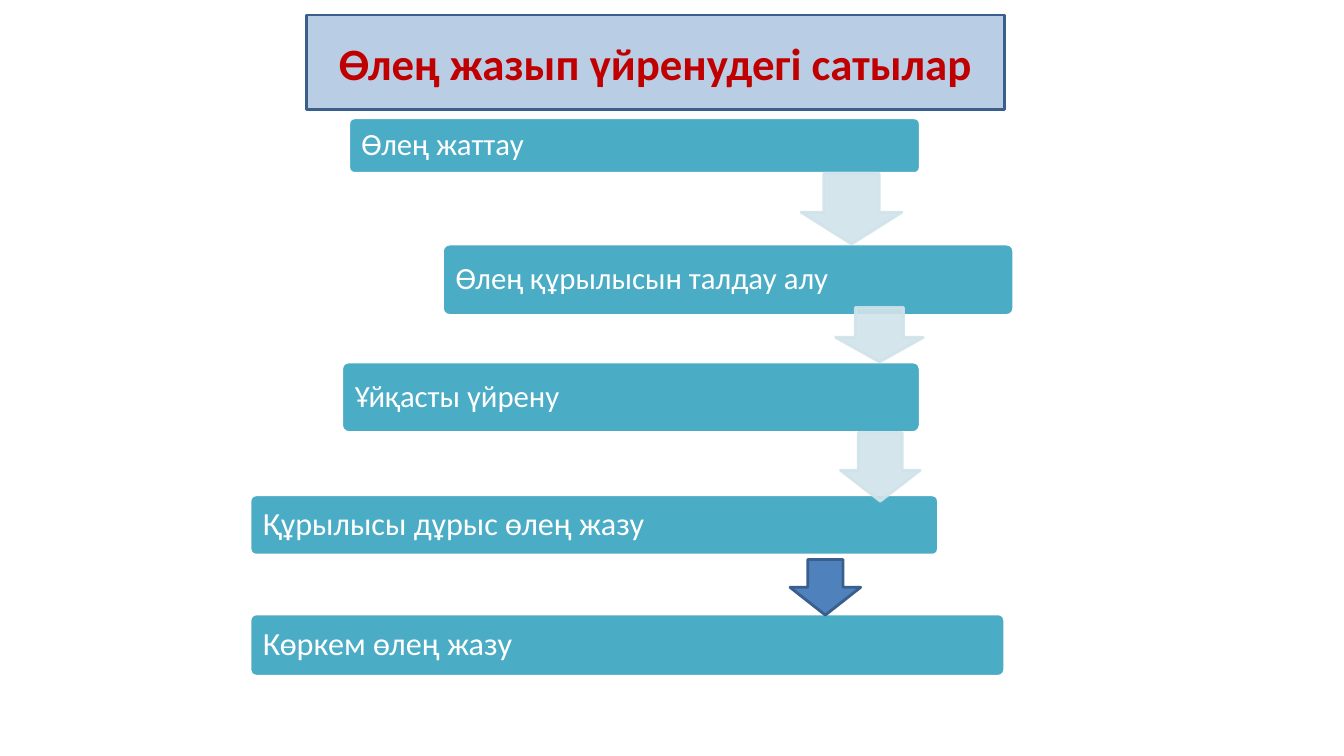
from lxml.etree import SubElement
from pptx import Presentation
from pptx.dml.color import RGBColor
from pptx.enum.shapes import MSO_SHAPE as Shape
from pptx.enum.text import MSO_ANCHOR as Anchor, PP_ALIGN as Align
from pptx.oxml.ns import qn
from pptx.util import Cm, Pt

TITLE_ONLY = 5
TITLE = "Өлең жазып үйренудегі сатылар"
TITLE_BOX = (7.72, 0.38, 17.6, 2.39)

# Step text, font size in points, box in cm
STEPS = [
    ("Өлең жаттау", 22, (8.79, 2.97, 14.4, 1.4)),
    ("Өлең құрылысын талдау алу", 22, (11.15, 6.15, 14.4, 1.8)),
    ("Ұйқасты үйрену", 22, (8.61, 9.12, 14.58, 1.78)),
    ("Құрылысы дұрыс өлең жазу", 23, (6.3, 12.47, 17.35, 1.52)),
    ("Көркем өлең жазу", 23, (6.3, 15.47, 19.02, 1.57)),
]
PALE_ARROWS = [
    (20.19, 4.37, 2.54, 1.78),
    (21.06, 7.75, 2.21, 1.37),
    (21.18, 10.9, 2.01, 1.73),
]
BLUE_ARROW = (19.91, 14.1, 1.78, 1.4)


def color(hex_string):
    return RGBColor.from_string(hex_string)


def paint(shape, fill, line):
    shape.fill.solid()
    shape.fill.fore_color.rgb = color(fill)
    shape.line.color.rgb = color(line)
    shape.line.width = Pt(2)


def write(shape, text, size, font_color, align, bold=False):
    frame = shape.text_frame
    frame.text = text
    frame.word_wrap = True
    frame.vertical_anchor = Anchor.MIDDLE
    paragraph = frame.paragraphs[0]
    paragraph.alignment = align
    font = paragraph.runs[0].font
    font.name = "Calibri"
    font.size = Pt(size)
    font.bold = bold
    font.color.rgb = color(font_color)


def add_box(slide, kind, box, fill, line):
    shape = slide.shapes.add_shape(kind, *map(Cm, box))
    shape.shadow.inherit = False
    paint(shape, fill, line)
    return shape


def set_title(slide, box):
    """Turn the title placeholder into a rounded, filled panel."""
    title = slide.shapes.title
    title.left, title.top, title.width, title.height = map(Cm, box)
    geometry = SubElement(title.element.spPr, qn("a:prstGeom"), prst="roundRect")
    SubElement(geometry, qn("a:avLst"))
    paint(title, "B9CDE5", "3A5F8C")
    write(title, TITLE, 32, "C00000", Align.CENTER, bold=True)


def add_step(slide, text, size, box):
    bar = add_box(slide, Shape.ROUNDED_RECTANGLE, box, "4BACC6", "FFFFFF")
    bar.adjustments[0] = 0.1
    write(bar, text, size, "FFFFFF", Align.LEFT)
    bar.text_frame.margin_left = Cm(0.28)
    bar.text_frame.paragraphs[0].line_spacing = 0.9


def add_pale_arrow(slide, box):
    arrow = add_box(slide, Shape.DOWN_ARROW, box, "D0E3EA", "D0E3EA")
    arrow.adjustments[0] = 0.55
    arrow.adjustments[1] = 0.45
    for paint_color in arrow.element.spPr.iter(qn("a:srgbClr")):
        SubElement(paint_color, qn("a:alpha"), val="90000")


def build_steps_slide(presentation):
    slide = presentation.slides.add_slide(presentation.slide_layouts[TITLE_ONLY])
    set_title(slide, TITLE_BOX)
    for text, size, box in STEPS:
        add_step(slide, text, size, box)
    for box in PALE_ARROWS:
        add_pale_arrow(slide, box)
    add_box(slide, Shape.DOWN_ARROW, BLUE_ARROW, "4F81BD", "3A5F8C")


def main():
    presentation = Presentation()
    presentation.slide_width = Cm(33.87)
    presentation.slide_height = Cm(19.05)
    build_steps_slide(presentation)
    presentation.save("out.pptx")


if __name__ == "__main__":
    main()
